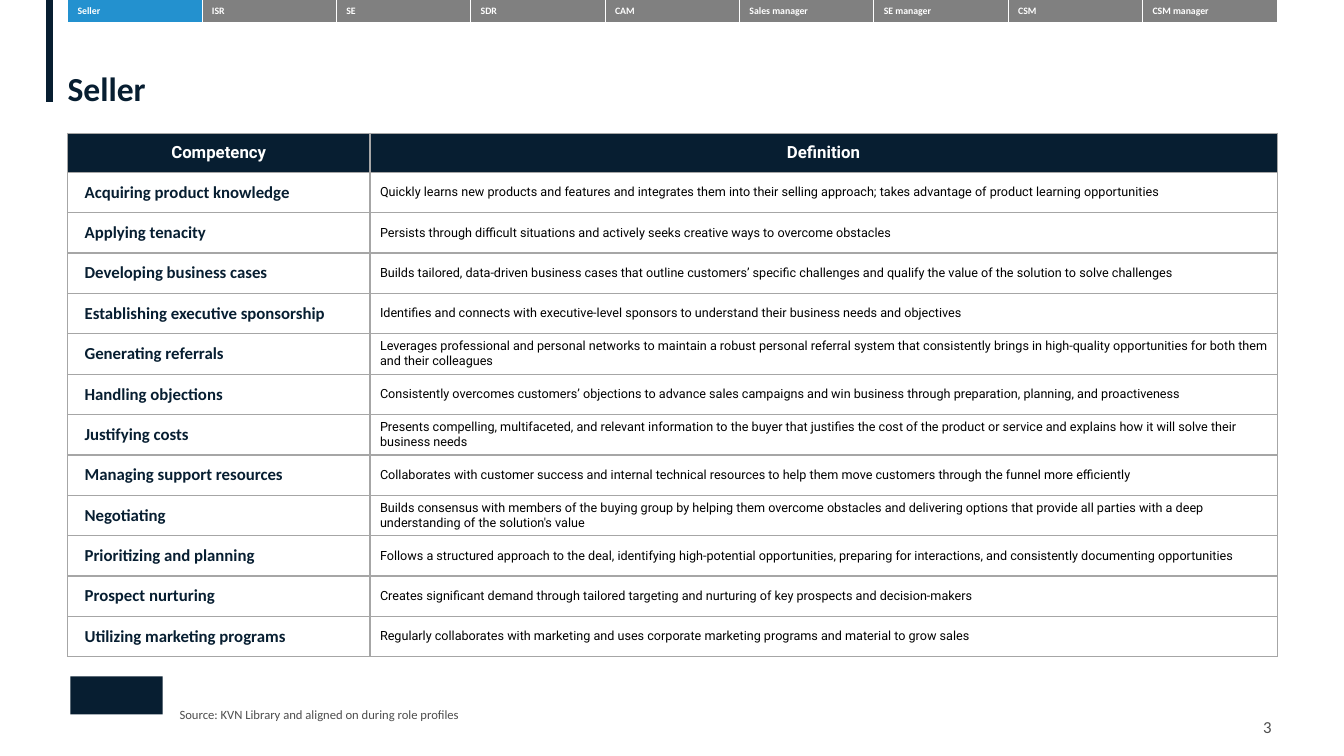
from lxml.etree import SubElement
from pptx import Presentation
from pptx.dml.color import RGBColor
from pptx.enum.shapes import MSO_CONNECTOR, MSO_SHAPE
from pptx.enum.text import MSO_ANCHOR, PP_ALIGN
from pptx.oxml.ns import qn
from pptx.util import Pt

NAVY = RGBColor(0x07, 0x1E, 0x31)
BLUE = RGBColor(0x23, 0x91, 0xCF)
TAB_GRAY = RGBColor(0x80, 0x80, 0x80)
LINE_GRAY = RGBColor(0xA6, 0xA6, 0xA6)
TEXT_GRAY = RGBColor(0x4D, 0x4D, 0x4D)
WHITE = RGBColor(0xFF, 0xFF, 0xFF)
BLACK = RGBColor(0x00, 0x00, 0x00)

LEFT = 48.24
CONTENT_WIDTH = 864

ROLES = ["Seller", "ISR", "SE", "SDR", "CAM", "Sales manager", "SE manager",
         "CSM", "CSM manager"]

COMPETENCIES = [
    ("Acquiring product knowledge",
     "Quickly learns new products and features and integrates them into their selling "
     "approach; takes advantage of product learning opportunities"),
    ("Applying tenacity",
     "Persists through difficult situations and actively seeks creative ways to overcome "
     "obstacles"),
    ("Developing business cases",
     "Builds tailored, data-driven business cases that outline customers’ specific "
     "challenges and qualify the value of the solution to solve challenges"),
    ("Establishing executive sponsorship",
     "Identifies and connects with executive-level sponsors to understand their business "
     "needs and objectives"),
    ("Generating referrals",
     "Leverages professional and personal networks to maintain a robust personal referral "
     "system that consistently brings in high-quality opportunities for both them and "
     "their colleagues"),
    ("Handling objections",
     "Consistently overcomes customers’ objections to advance sales campaigns and win "
     "business through preparation, planning, and proactiveness"),
    ("Justifying costs",
     "Presents compelling, multifaceted, and relevant information to the buyer that "
     "justifies the cost of the product or service and explains how it will solve their "
     "business needs"),
    ("Managing support resources",
     "Collaborates with customer success and internal technical resources to help them "
     "move customers through the funnel more efficiently"),
    ("Negotiating",
     "Builds consensus with members of the buying group by helping them overcome obstacles "
     "and delivering options that provide all parties with a deep understanding of the "
     "solution's value"),
    ("Prioritizing and planning",
     "Follows a structured approach to the deal, identifying high-potential opportunities, "
     "preparing for interactions, and consistently documenting opportunities"),
    ("Prospect nurturing",
     "Creates significant demand through tailored targeting and nurturing of key prospects "
     "and decision-makers"),
    ("Utilizing marketing programs",
     "Regularly collaborates with marketing and uses corporate marketing programs and "
     "material to grow sales"),
]


def add_run(paragraph, text, size, font_name, color, bold=False):
    run = paragraph.add_run()
    run.text = text
    run.font.size = Pt(size)
    run.font.name = font_name
    run.font.color.rgb = color
    run.font.bold = bold


def add_text(slide, box, text, size, color, bold=False, anchor=MSO_ANCHOR.TOP):
    """Add a one-paragraph text box without insets and return its paragraph."""
    frame = slide.shapes.add_textbox(*map(Pt, box)).text_frame
    frame.word_wrap = True
    frame.vertical_anchor = anchor
    frame.margin_left = frame.margin_right = frame.margin_top = frame.margin_bottom = 0
    add_run(frame.paragraphs[0], text, size, "Calibri", color, bold)
    return frame.paragraphs[0]


def add_plain_table(slide, box, column_widths, row_heights):
    table = slide.shapes.add_table(len(row_heights), len(column_widths),
                                   *map(Pt, box)).table
    table.first_row = table.horz_banding = False
    for column, width in zip(table.columns, column_widths):
        column.width = Pt(width)
    for row, height in zip(table.rows, row_heights):
        row.height = Pt(height)
    return table


def set_borders(cell, color, width, sides):
    """Draw the given sides of a cell and clear the others."""
    properties = cell._tc.get_or_add_tcPr()
    for side in "LRTB":
        line = SubElement(properties, qn(f"a:ln{side}"), w=str(Pt(width)))
        if side in sides:
            fill = SubElement(line, qn("a:solidFill"))
            SubElement(fill, qn("a:srgbClr"), val=str(color))
        else:
            SubElement(line, qn("a:noFill"))


def fill_cell(cell, color):
    cell.fill.solid()
    cell.fill.fore_color.rgb = color


def add_role_tabs(slide, box, active_role):
    tab_width = box[2] / len(ROLES)
    table = add_plain_table(slide, box, [tab_width] * len(ROLES), [box[3]])
    for cell, role in zip(table.rows[0].cells, ROLES):
        set_borders(cell, WHITE, 0.5, "LR")
        fill_cell(cell, BLUE if role == active_role else TAB_GRAY)
        add_run(cell.text_frame.paragraphs[0], role, 7, "Calibri", WHITE, True)


def add_competency_table(slide, box):
    header_height = 28
    row_height = (box[3] - header_height) / len(COMPETENCIES)
    table = add_plain_table(slide, box, [box[2] / 4, box[2] * 3 / 4],
                            [header_height] + [row_height] * len(COMPETENCIES))
    for cell in table.iter_cells():
        set_borders(cell, LINE_GRAY, 1, "LRTB")
        cell.fill.background()
        cell.vertical_anchor = MSO_ANCHOR.MIDDLE

    for cell, heading in zip(table.rows[0].cells, ("Competency", "Definition")):
        fill_cell(cell, NAVY)
        cell.margin_left = cell.margin_right = cell.margin_top = cell.margin_bottom = 0
        paragraph = cell.text_frame.paragraphs[0]
        paragraph.alignment = PP_ALIGN.CENTER
        add_run(paragraph, heading, 12, "Roboto", WHITE, True)

    for row, (competency, definition) in enumerate(COMPETENCIES, start=1):
        paragraph = table.cell(row, 0).text_frame.paragraphs[0]
        paragraph._p.get_or_add_pPr().set("marL", str(Pt(5)))
        add_run(paragraph, competency, 12, "Calibri", NAVY, True)
        add_run(table.cell(row, 1).text_frame.paragraphs[0], definition, 9, "Roboto", BLACK)


def add_title(slide, box, title):
    left, top, _, height = box
    accent_x = Pt(left - 12.75)
    accent = slide.shapes.add_connector(MSO_CONNECTOR.STRAIGHT, accent_x, 0,
                                        accent_x, Pt(top + height - 5))
    accent.line.color.rgb = NAVY
    accent.line.width = Pt(5)
    SubElement(accent._element.spPr, qn("a:effectLst"))
    paragraph = add_text(slide, box, title, 24, NAVY, True, MSO_ANCHOR.BOTTOM)
    paragraph.line_spacing = 0.9


def add_footer(slide, box, source, number):
    left, top, width, _ = box
    emblem = slide.shapes.add_shape(MSO_SHAPE.RECTANGLE, Pt(left + 2), Pt(top),
                                    Pt(66), Pt(27))
    emblem.shadow.inherit = False
    emblem.fill.solid()
    emblem.fill.fore_color.rgb = NAVY
    emblem.line.fill.background()
    add_text(slide, (left + 80, top + 21.5, 467, 11), source, 9, TEXT_GRAY)
    add_text(slide, (left + width - 10, top + 29, 24.5, 14.5), number, 12, TEXT_GRAY,
             anchor=MSO_ANCHOR.MIDDLE)


def add_role_slide(presentation, role, number):
    slide = presentation.slides.add_slide(presentation.slide_layouts[6])
    add_title(slide, (LEFT, 50.4, 893.5, 27.4), role)
    add_competency_table(slide, (LEFT, 95.2, CONTENT_WIDTH, 373.6))
    add_footer(slide, (LEFT, 483.2, CONTENT_WIDTH, 44),
               "Source: KVN Library and aligned on during role profiles", number)
    add_role_tabs(slide, (LEFT, 0, CONTENT_WIDTH, 15.6), role)


def main():
    presentation = Presentation()
    presentation.slide_width = Pt(960)
    presentation.slide_height = Pt(540)
    add_role_slide(presentation, "Seller", "3")
    presentation.save("out.pptx")


if __name__ == "__main__":
    main()
